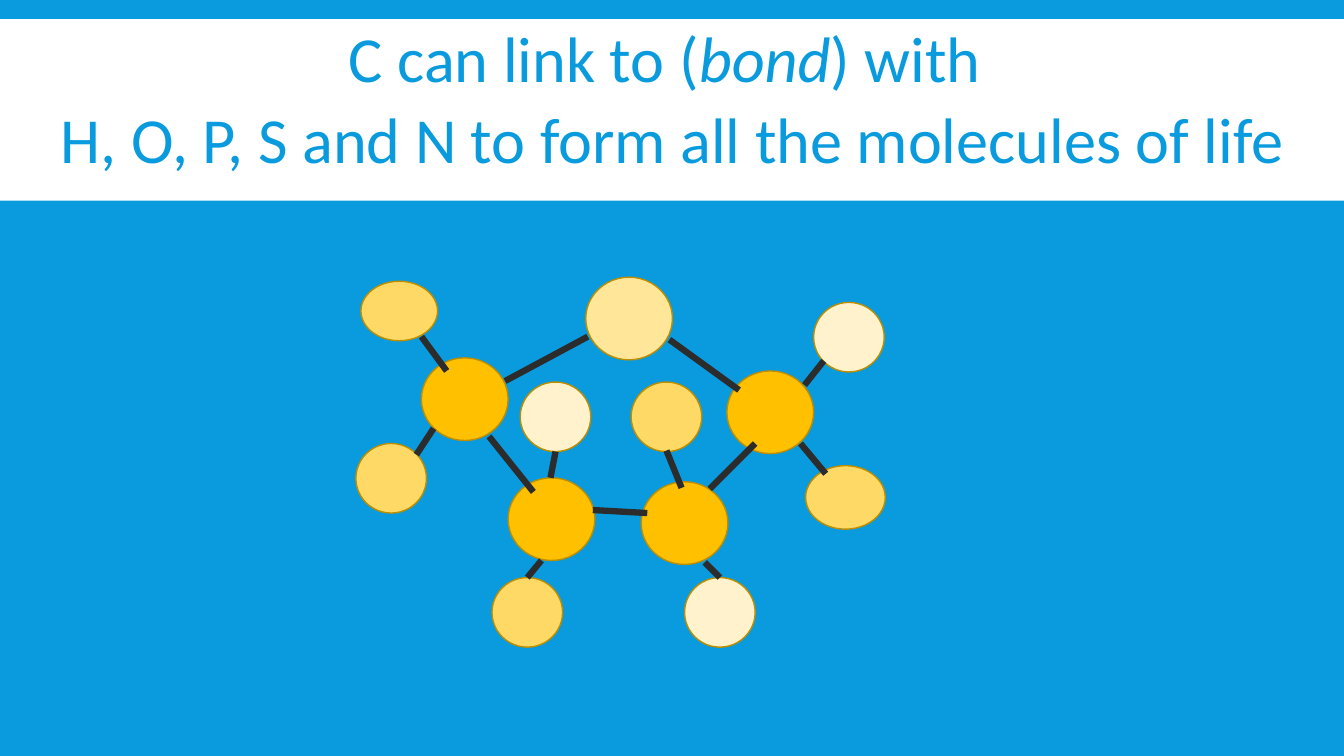
from pptx import Presentation
from pptx.dml.color import RGBColor
from pptx.enum.shapes import MSO_CONNECTOR, MSO_SHAPE
from pptx.enum.text import MSO_ANCHOR, MSO_AUTO_SIZE, PP_ALIGN
from pptx.oxml.ns import qn
from pptx.util import Pt
from lxml.etree import SubElement

PX = 9144  # 100 px to the inch
PAGE_SIZE = (1333, 750)
BAND = (0, 19, 1333, 180)
HEADING = (0, 28, 1333, 181)

BLUE = RGBColor(0x09, 0x9B, 0xDD)
WHITE = RGBColor(0xFF, 0xFF, 0xFF)
AMBER = RGBColor(0xFF, 0xC0, 0x00)
SAND = RGBColor(0xFF, 0xE6, 0x99)
CREAM = RGBColor(0xFF, 0xF2, 0xCC)
YELLOW = RGBColor(0xFF, 0xD9, 0x66)
OUTLINE = RGBColor(0xBD, 0x8E, 0x00)
CHARCOAL = RGBColor(0x2C, 0x2C, 0x2C)

# Each line is a list of (text, italic)
HEADING_LINES = [
    [("C can link to (", False), ("bond", True), (") with ", False)],
    [("H, O, P, S and N to form all the molecules of life", False)],
]
PARA_FORMAT = {
    "alignment": PP_ALIGN.CENTER,
    "line_spacing": 0.8,
    "space_before": Pt(12),
    "space_after": Pt(2),
}
FONT_FORMAT = {"name": "Calibri", "size": Pt(45.9)}
FRAME_FORMAT = {
    "word_wrap": True,
    "auto_size": MSO_AUTO_SIZE.NONE,
    "vertical_anchor": MSO_ANCHOR.TOP,
}

# (fill, size, top-left corners)
ATOMS = [
    (AMBER, (86, 82), [(721, 368), (418, 355), (504, 474), (636, 478)]),
    (SAND, (86, 82), [(581, 275)]),
    (CREAM, (70, 69), [(516, 379), (679, 573), (807, 300)]),
    (YELLOW, (70, 69), [(353, 440), (488, 573), (626, 379)]),
    (YELLOW, (79, 63), [(799, 462)]),
    (YELLOW, (76, 59), [(358, 279)]),
]
# (start x, start y, end x, end y)
BONDS = [
    (418, 334, 443, 368), (413, 451, 430, 425), (485, 433, 529, 488),
    (588, 506, 642, 509), (704, 485, 749, 440), (664, 337, 733, 387),
    (583, 334, 501, 378), (537, 556, 523, 573), (699, 558, 714, 573),
    (798, 382, 817, 358), (794, 440, 819, 470), (551, 448, 546, 474),
    (661, 447, 676, 484),
]


def emu(lengths):
    return [length * PX for length in lengths]


def set_all(target, values):
    for name, value in values.items():
        setattr(target, name, value)


def add_filled(page, kind, place, color):
    shape = page.shapes.add_shape(kind, *emu(place))
    shape.shadow.inherit = False
    shape.fill.solid()
    shape.fill.fore_color.rgb = color
    return shape


def write_heading(page):
    box = page.placeholders[1]
    box.left, box.top, box.width, box.height = emu(HEADING)
    set_all(box.text_frame, FRAME_FORMAT)
    for index, line in enumerate(HEADING_LINES):
        para = box.text_frame.add_paragraph() if index else box.text_frame.paragraphs[0]
        set_all(para, PARA_FORMAT)
        properties = para._p.get_or_add_pPr()
        properties.set("marL", "0")
        properties.set("indent", "0")
        SubElement(properties, qn("a:buNone"))
        for text, italic in line:
            span = para.add_run()
            span.text = text
            set_all(span.font, FONT_FORMAT)
            span.font.italic = italic
            span.font.color.rgb = BLUE
    return box


def add_bond(page, ends):
    bond = page.shapes.add_connector(MSO_CONNECTOR.STRAIGHT, *emu(ends))
    bond.line.color.rgb = CHARCOAL
    bond.line.width = Pt(4.5)
    SubElement(bond.element.spPr, qn("a:effectLst"))


def main():
    deck = Presentation()
    deck.slide_width, deck.slide_height = emu(PAGE_SIZE)
    page = deck.slides.add_slide(deck.slide_layouts[1])
    page.background.fill.solid()
    page.background.fill.fore_color.rgb = BLUE
    title = page.shapes.title.element
    title.getparent().remove(title)

    heading = write_heading(page)
    band = add_filled(page, MSO_SHAPE.RECTANGLE, BAND, WHITE)
    band.line.fill.background()
    heading.element.addprevious(band.element)

    for color, size, corners in ATOMS:
        for corner in corners:
            atom = add_filled(page, MSO_SHAPE.OVAL, corner + size, color)
            atom.line.color.rgb = OUTLINE
            atom.line.width = Pt(1)
    for ends in BONDS:
        add_bond(page, ends)
    deck.save("out.pptx")


if __name__ == "__main__":
    main()
